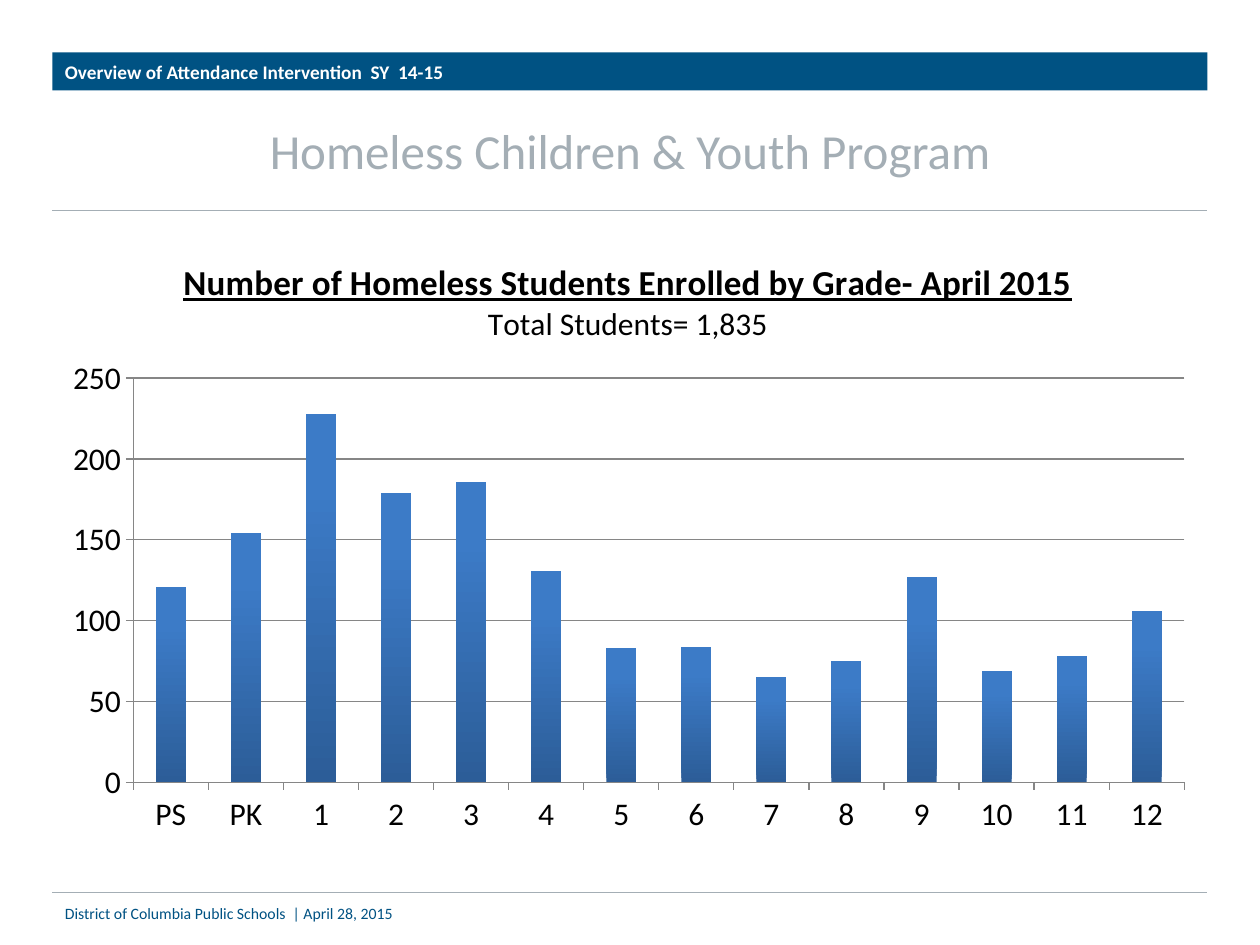
from lxml.etree import SubElement
from pptx import Presentation
from pptx.chart.data import CategoryChartData
from pptx.dml.color import RGBColor
from pptx.enum.chart import XL_CHART_TYPE, XL_TICK_MARK
from pptx.enum.shapes import MSO_CONNECTOR, MSO_SHAPE
from pptx.enum.text import MSO_ANCHOR, PP_ALIGN
from pptx.oxml import parse_xml
from pptx.oxml.ns import nsdecls, qn
from pptx.util import Emu, Pt

PX = 9525  # EMU per px, 96 px to the inch
FONT = "Calibri"
NAVY = RGBColor(0x00, 0x52, 0x83)
GREY = RGBColor(0xA4, 0xAE, 0xB5)
AXIS_GREY = RGBColor(0x86, 0x86, 0x86)
WHITE = RGBColor(0xFF, 0xFF, 0xFF)
BLACK = RGBColor(0x00, 0x00, 0x00)
BAR_BOTTOM = RGBColor(0x2C, 0x5D, 0x98)
BAR_TOP = RGBColor(0x3C, 0x7B, 0xC7)

GRADES = ["PS", "PK"] + [str(grade) for grade in range(1, 13)]
STUDENTS = [121, 154, 228, 179, 186, 131, 83, 84, 65, 75, 127, 69, 78, 106]


def emu(*lengths):
    return [Emu(length * PX) for length in lengths]


def style_font(font, size, color, bold=False):
    font.name = FONT
    font.size = Pt(size)
    font.bold = bold
    font.color.rgb = color


def write_line(frame, text, size, color, bold=False, align=PP_ALIGN.LEFT):
    frame.word_wrap = True
    frame.vertical_anchor = MSO_ANCHOR.MIDDLE
    frame.text = text
    paragraph = frame.paragraphs[0]
    paragraph.alignment = align
    style_font(paragraph.runs[0].font, size, color, bold)


def add_rule(slide, left, top, width):
    rule = slide.shapes.add_connector(
        MSO_CONNECTOR.STRAIGHT, *emu(left, top, left + width, top))
    rule.line.color.rgb = GREY
    rule.line.width = Pt(0.5)
    SubElement(rule._element.spPr, qn("a:effectLst"))


def add_section_band(slide, left, top, width, height):
    band = slide.shapes.add_shape(
        MSO_SHAPE.RECTANGLE, *emu(left, top, width, height))
    band.shadow.inherit = False
    band.fill.solid()
    band.fill.fore_color.rgb = NAVY
    band.line.fill.background()
    write_line(band.text_frame, "Overview of Attendance Intervention  SY  14-15",
               11, WHITE, bold=True)


def place_title(slide, left, top, width, height):
    title = slide.shapes.title
    title.left, title.top, title.width, title.height = emu(left, top, width, height)
    write_line(title.text_frame, "Homeless Children & Youth Program",
               28, GREY, align=PP_ALIGN.CENTER)
    add_rule(slide, left, top + height, width)


def add_footer(slide, left, top, width, height):
    add_rule(slide, left, top, width)
    footer = slide.shapes.add_textbox(*emu(left, top, 632, height))
    write_line(footer.text_frame,
               "District of Columbia Public Schools  | April 28, 2015", 9, NAVY)


def manual_layout(**fractions):
    """Layout of a chart part, as fractions of the chart box."""
    target = '<c:layoutTarget val="inner"/>' if "w" in fractions else ""
    modes = "".join(f'<c:{side}Mode val="edge"/>' for side in "xy")
    sizes = "".join(f'<c:{key} val="{value}"/>' for key, value in fractions.items())
    return parse_xml(f'<c:layout {nsdecls("c")}><c:manualLayout>'
                     f"{target}{modes}{sizes}</c:manualLayout></c:layout>")


def set_layout(part, layout, after=None):
    for old in part.findall(qn("c:layout")):
        part.remove(old)
    part.insert(0 if after is None else part.index(after) + 1, layout)


def add_chart_title(chart):
    frame = chart.chart_title.text_frame
    frame.text = "Number of Homeless Students Enrolled by Grade- April 2015"
    heading = frame.paragraphs[0]
    style_font(heading.runs[0].font, 20, BLACK, bold=True)
    heading.runs[0].font.underline = True
    total = frame.add_paragraph()
    total.text = "Total Students= 1,835"
    style_font(total.runs[0].font, 18, BLACK)
    title = chart.chart_title._element
    set_layout(title, manual_layout(x=0.11, y=0.04), title.find(qn("c:tx")))


def add_enrollment_chart(slide, left, top, width, height):
    enrollment = CategoryChartData()
    enrollment.categories = GRADES
    enrollment.add_series("Series 1", STUDENTS)
    chart = slide.shapes.add_chart(
        XL_CHART_TYPE.COLUMN_CLUSTERED, *emu(left, top, width, height),
        enrollment).chart
    chart.has_legend = False
    style_font(chart.font, 18, BLACK)
    add_chart_title(chart)
    set_layout(chart._chartSpace.chart.plotArea,
               manual_layout(x=0.07, y=0.24, w=0.91, h=0.66))

    # Columns
    plot = chart.plots[0]
    plot.gap_width = 150
    plot.vary_by_categories = False
    columns = plot.series[0].format.fill
    columns.gradient()
    columns.gradient_angle = 90
    for stop, color, position in zip(
            columns.gradient_stops, (BAR_BOTTOM, BAR_TOP), (0, 0.8)):
        stop.color.rgb = color
        stop.position = position

    # Axes
    grades, students = chart.category_axis, chart.value_axis
    students.minimum_scale, students.maximum_scale = 0, 250
    students.major_unit = 50
    students.has_major_gridlines = True
    for part in (grades, students, students.major_gridlines):
        part.format.line.color.rgb = AXIS_GREY
        part.format.line.width = Pt(0.75)
    for axis in (grades, students):
        axis.major_tick_mark = XL_TICK_MARK.OUTSIDE
        axis.minor_tick_mark = XL_TICK_MARK.NONE


def main():
    deck = Presentation()
    deck.slide_width, deck.slide_height = emu(960, 720)
    slide = deck.slides.add_slide(deck.slide_layouts[5])
    left, width = 40, 880
    place_title(slide, left, 69, width, 91)
    add_enrollment_chart(slide, left, 176, width, 467)
    add_section_band(slide, left, 40, width, 29)
    add_footer(slide, left, 680, width, 32)
    deck.save("out.pptx")


if __name__ == "__main__":
    main()
